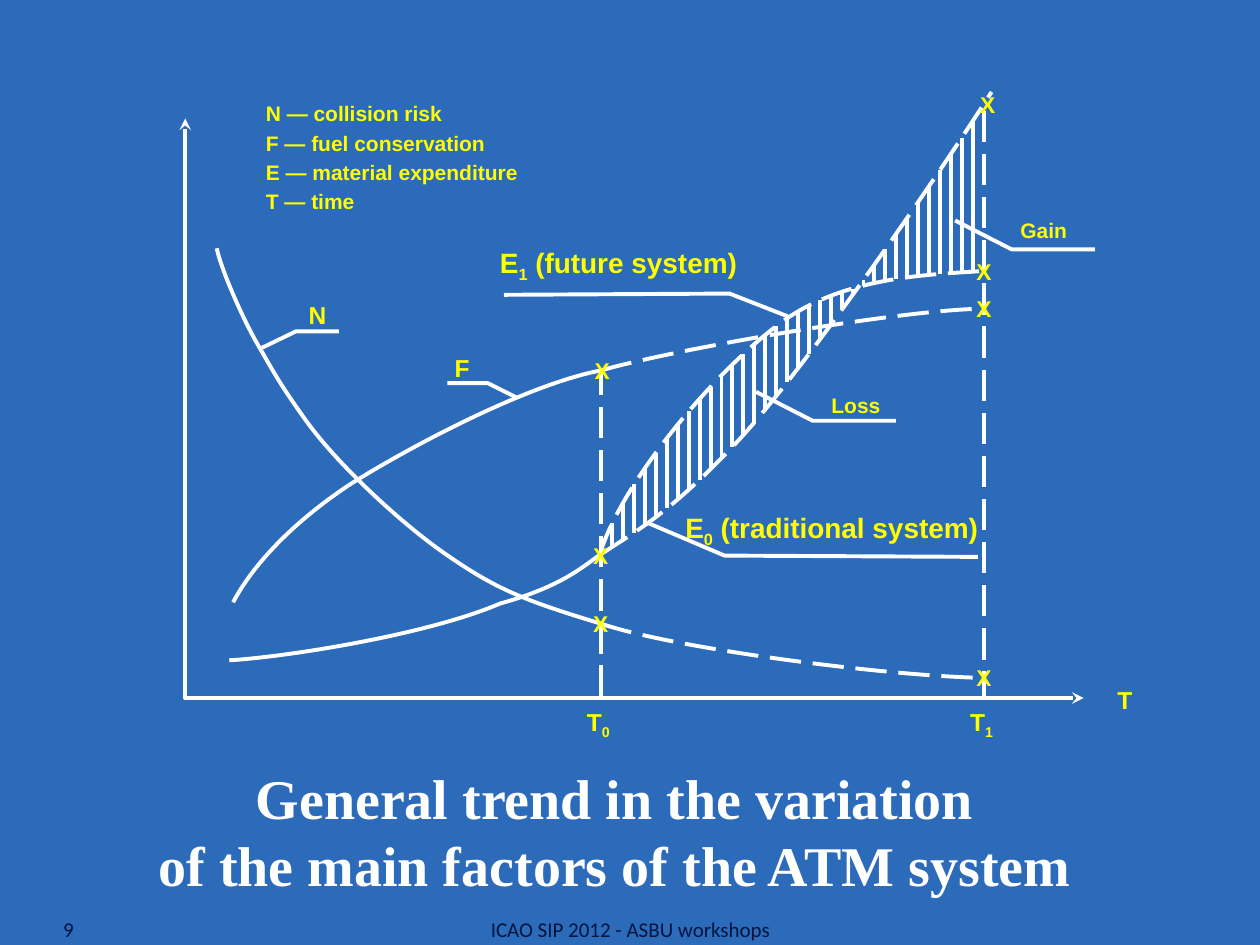
from dataclasses import dataclass
from typing import Any

import lxml.etree
import pptx
import pptx.dml.color
import pptx.enum.dml
import pptx.enum.shapes
import pptx.enum.text
import pptx.oxml.ns
import pptx.util

PX = pptx.util.Inches(1) // 100  # 100 px to the inch
WHITE, YELLOW, NAVY, BLUE = "FFFFFF", "FFFF00", "00153E", "2C6ABA"
LABEL_FORMAT = {"name": "Arial", "bold": True}
TITLE_FORMAT = {"name": "Times New Roman", "bold": True, "size": pptx.util.Pt(32)}
FOOTER_FORMAT = {"name": "Calibri", "size": pptx.util.Pt(12)}
CENTER = pptx.enum.text.PP_ALIGN.CENTER
MIDDLE = pptx.enum.text.MSO_ANCHOR.MIDDLE
CURVE_STEPS = 30
HATCH_COUNT, HATCH_LEFT, HATCH_RIGHT = 34, 486, 772

Point = tuple[float, float]


@dataclass
class Label:
    left: int
    top: int
    width: int
    height: int
    text: str
    size: int
    subscript: str = ""
    ending: str = ""
    wrap: bool = True


@dataclass
class Curve:
    """A start point, then two control points and an end point per segment."""
    points: list[Point]
    dashed: bool = False


CURVES = {
    "fuel": Curve([(185, 478), (201, 448), (232, 415), (277, 385),
                   (326, 354), (419, 305), (477, 294)]),
    "risk": Curve([(172, 197), (175, 212), (190, 247), (202, 269),
                   (216, 293), (220, 302), (243, 334),
                   (266, 366), (315, 413), (354, 440),
                   (393, 467), (414, 476), (477, 495)]),
    "expenditure": Curve([(182, 524), (221, 522), (336, 505), (397, 479),
                          (447, 465), (462, 450), (478, 439)]),
    "future": Curve([(476, 440), (494, 381), (569, 293), (620, 256),
                     (670, 219), (739, 218), (781, 215)], True),
    "risk forecast": Curve([(477, 495), (532, 514), (697, 536), (778, 538)], True),
    "fuel forecast": Curve([(477, 294), (532, 278), (712, 246), (780, 245)], True),
    "traditional": Curve([(477, 440), (497, 426), (527, 412), (580, 356),
                          (634, 301), (749, 133), (787, 73)], True),
}
CALLOUTS = [
    [(206, 277), (235, 263), (269, 263)],
    [(355, 304), (387, 304), (411, 316)],
    [(514, 415), (575, 441), (776, 442)],
    [(600, 311), (645, 334), (711, 334)],
    [(400, 234), (579, 233), (625, 251)],
    [(758, 175), (803, 198), (869, 198)],
]
MARKERS = [(765, 522), (765, 229), (765, 200), (462, 278),
           (461, 425), (461, 479), (768, 67)]
LABELS = [
    Label(235, 233, 35, 33, "N", 14),
    Label(351, 275, 32, 33, "F", 14, wrap=False),
    Label(534, 400, 255, 37, "E", 16, "0", " (traditional system)", wrap=False),
    Label(387, 190, 217, 37, "E", 16, "1", " (future system)"),
    Label(650, 307, 61, 30, "Loss", 12),
    Label(800, 168, 61, 30, "Gain", 12),
    Label(456, 556, 42, 33, "T", 14, "0"),
    Label(760, 556, 42, 33, "T", 14, "1"),
    Label(877, 539, 42, 33, "T", 14),
] + [Label(left, top, 32, 32, "X", 13, wrap=False) for left, top in MARKERS]
LEGEND = ["N — collision risk", "F — fuel conservation",
          "E — material expenditure", "T — time"]


def rgb(color: str) -> pptx.dml.color.RGBColor:
    return pptx.dml.color.RGBColor.from_string(color)


def add_element(parent: Any, tag: str, **attributes: str) -> Any:
    return lxml.etree.SubElement(parent, pptx.oxml.ns.qn(tag), attributes)


def add_run(paragraph: Any, text: str, color: str, values: dict[str, Any]) -> Any:
    run = paragraph.add_run()
    run.text = text
    for name, value in values.items():
        setattr(run.font, name, value)
    run.font.color.rgb = rgb(color)
    return run


def place(shape: Any, left: int, top: int, width: int, height: int) -> None:
    box = {"left": left, "top": top, "width": width, "height": height}
    for name, value in box.items():
        setattr(shape, name, value * PX)


def style_line(shape: Any, dashed: bool = False) -> None:
    shape.line.color.rgb = rgb(WHITE)
    shape.line.width = pptx.util.Pt(2.25)
    if dashed:
        shape.line.dash_style = pptx.enum.dml.MSO_LINE.LONG_DASH


def draw_line(slide: Any, start: Point, end: Point, dashed: bool = False) -> None:
    connector = slide.shapes.add_connector(
        pptx.enum.shapes.MSO_CONNECTOR.STRAIGHT,
        *(round(value * PX) for value in (*start, *end)))
    style_line(connector, dashed)
    add_element(connector._element.spPr, "a:effectLst")


def draw_outline(slide: Any, points: list[Point], dashed: bool = False) -> Any:
    scaled = [(x * PX, y * PX) for x, y in points]
    builder = slide.shapes.build_freeform(*scaled[0])
    builder.add_line_segments(scaled[1:], close=False)
    shape = builder.convert_to_shape()
    shape.fill.background()
    shape.shadow.inherit = False
    style_line(shape, dashed)
    return shape


def draw_curve(slide: Any, curve: Curve) -> None:
    """Draw the points as an outline, then join each three lines into one Bezier."""
    shape = draw_outline(slide, curve.points, curve.dashed)
    lines = list(shape._element.iter(pptx.oxml.ns.qn("a:lnTo")))
    for first in range(0, len(lines), 3):
        bezier = add_element(lines[first].getparent(), "a:cubicBezTo")
        for line in lines[first:first + 3]:
            bezier.append(line[0])
            line.getparent().remove(line)


def trace(curve: Curve) -> list[Point]:
    """Return points along the cubic Bezier segments of a curve."""
    traced = [curve.points[0]]
    for first in range(0, len(curve.points) - 1, 3):
        controls = curve.points[first:first + 4]
        for step in range(1, CURVE_STEPS + 1):
            t = step / CURVE_STEPS
            weights = ((1 - t) ** 3, 3 * t * (1 - t) ** 2, 3 * t * t * (1 - t), t ** 3)
            x, y = (sum(w * p[axis] for w, p in zip(weights, controls)) for axis in (0, 1))
            traced.append((x, y))
    return traced


def height_at(points: list[Point], x: float) -> float:
    """Interpolate the y of a traced curve at x."""
    for (x0, y0), (x1, y1) in zip(points, points[1:]):
        if x0 <= x <= x1:
            return y0 + (y1 - y0) * (x - x0) / (x1 - x0)
    raise ValueError(f"{x} is outside the curve")


def draw_hatching(slide: Any, first: Curve, second: Curve) -> None:
    edges = trace(first), trace(second)
    for index in range(HATCH_COUNT):
        x = HATCH_LEFT + (HATCH_RIGHT - HATCH_LEFT) * index / (HATCH_COUNT - 1)
        top, bottom = sorted(height_at(edge, x) for edge in edges)
        draw_line(slide, (x, top), (x, bottom))


def draw_axes(slide: Any) -> None:
    axes = draw_outline(slide, [(860, 554), (147, 554), (147, 94)])
    for tag in ("a:headEnd", "a:tailEnd"):
        add_element(axes.line._get_or_add_ln(), tag, type="stealth")


def draw_label(slide: Any, label: Label) -> None:
    box = slide.shapes.add_textbox(0, 0, 0, 0)
    place(box, label.left, label.top, label.width, label.height)
    box.text_frame.word_wrap = label.wrap
    box.text_frame.auto_size = pptx.enum.text.MSO_AUTO_SIZE.SHAPE_TO_FIT_TEXT
    values = LABEL_FORMAT | {"size": pptx.util.Pt(label.size)}
    for text in filter(None, (label.text, label.subscript, label.ending)):
        run = add_run(box.text_frame.paragraphs[0], text, YELLOW, values)
        if text == label.subscript:
            run._r.get_or_add_rPr().set("baseline", "-25000")


def fill_title(title: Any) -> None:
    place(title, 42, 600, 892, 118)
    frame = title.text_frame
    lines = ["General trend in the variation", "of the main factors of the ATM system"]
    for index, line in enumerate(lines):
        paragraph = frame.add_paragraph() if index else frame.paragraphs[0]
        paragraph.alignment = CENTER
        add_run(paragraph, line, WHITE, TITLE_FORMAT)


def fill_legend(body: Any) -> None:
    place(body, 201, 75, 225, 102)
    frame = body.text_frame
    frame.auto_size = pptx.enum.text.MSO_AUTO_SIZE.NONE
    for index, line in enumerate(LEGEND):
        paragraph = frame.add_paragraph() if index else frame.paragraphs[0]
        properties = paragraph._p.get_or_add_pPr()
        properties.set("marL", "0")
        properties.set("indent", "0")
        add_element(properties, "a:buNone")
        paragraph.space_before = pptx.util.Pt(2.3 if index else 0)
        add_run(paragraph, line, YELLOW, LABEL_FORMAT | {"size": pptx.util.Pt(12)})


def draw_footer(slide: Any, left: int, width: int, text: str, frame_values: dict[str, Any]) -> Any:
    box = slide.shapes.add_textbox(0, 0, 0, 0)
    place(box, left, 725, width, 25)
    values = {"word_wrap": True, "vertical_anchor": MIDDLE} | frame_values
    for name, value in values.items():
        setattr(box.text_frame, name, value)
    add_run(box.text_frame.paragraphs[0], text, NAVY, FOOTER_FORMAT)
    return box


def main() -> None:
    presentation = pptx.Presentation()
    presentation.slide_width, presentation.slide_height = 1000 * PX, 750 * PX
    slide = presentation.slides.add_slide(presentation.slide_layouts[1])
    slide.background.fill.solid()
    slide.background.fill.fore_color.rgb = rgb(BLUE)
    fill_title(slide.shapes.title)
    fill_legend(slide.placeholders[1])
    for curve in CURVES.values():
        draw_curve(slide, curve)
    for x, start, end in ((781, 88, 553), (477, 553, 295)):
        draw_line(slide, (x, start), (x, end), dashed=True)
    draw_hatching(slide, CURVES["future"], CURVES["traditional"])
    draw_axes(slide)
    for callout in CALLOUTS:
        draw_outline(slide, callout)
    for label in LABELS:
        draw_label(slide, label)
    draw_footer(slide, 0, 342, "9", {"margin_left": 50 * PX, "margin_right": 0,
                                     "margin_top": 0, "margin_bottom": 0})
    footer = draw_footer(slide, 142, 717, "ICAO SIP 2012 - ASBU workshops", {})
    footer.text_frame.paragraphs[0].alignment = CENTER
    presentation.save("out.pptx")


if __name__ == "__main__":
    main()
